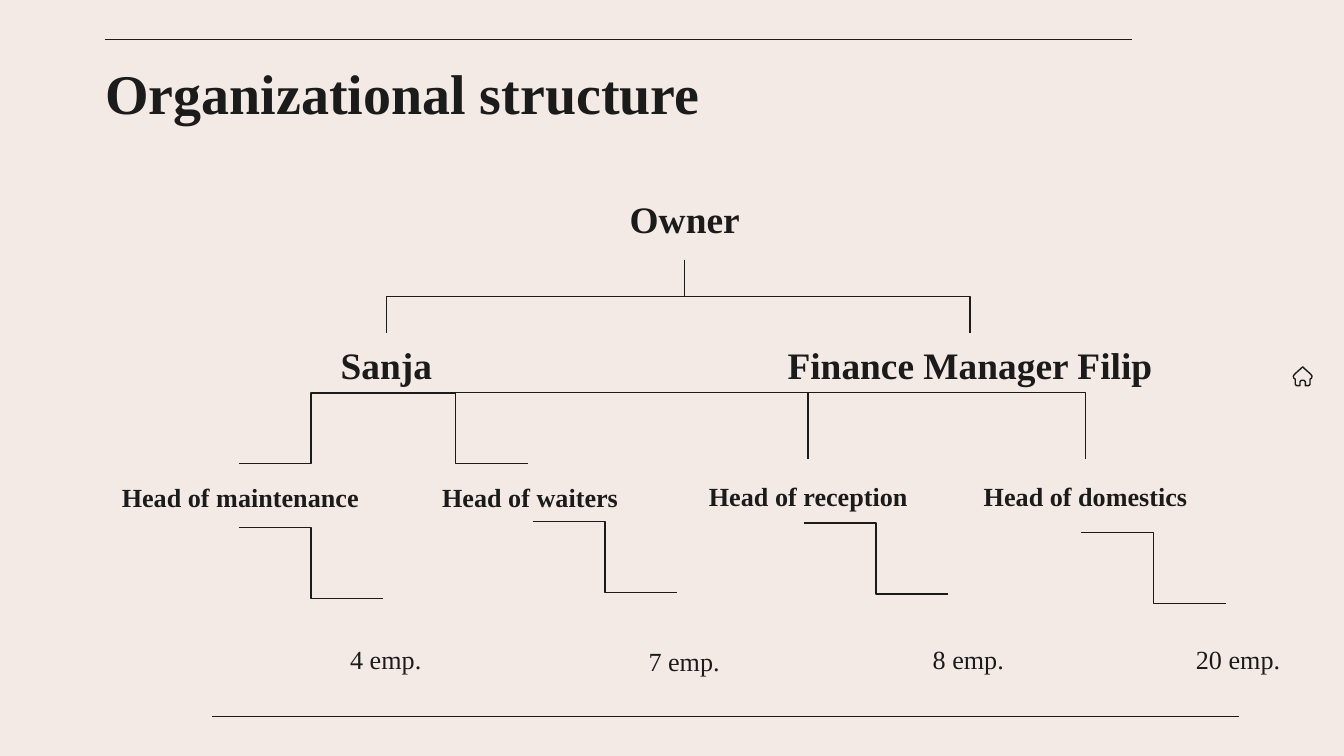
import pptx
import pptx.util
import pptx.dml.color
import pptx.enum.shapes
import pptx.enum.text
import pptx.oxml.ns

# The slide is a grid of 100 columns by 56.25 rows
COLS, ROWS = 100, 56.25
CELL = 91440
FONT = "Times New Roman"
HUES = {"paper": "F4EAE5", "ink": "1B1B1B"}
KINDS = pptx.enum.shapes.MSO_CONNECTOR
TAG = pptx.oxml.ns.qn


def grid(*sizes):
    return [pptx.util.Emu(round(size * CELL)) for size in sizes]


def hue(name):
    return pptx.dml.color.RGBColor.from_string(HUES[name])


def ink(line):
    line.color.rgb = hue("ink")
    line.width = pptx.util.Pt(0.75)


def label(slide, text, box, size, bold=True, title=False):
    frame = slide.shapes.add_textbox(*grid(*box)).text_frame
    frame.word_wrap = True
    edge = grid(0 if title else 1)[0]
    frame.margin_left = frame.margin_right = edge
    frame.margin_top = frame.margin_bottom = edge
    anchor = pptx.enum.text.MSO_ANCHOR
    align = pptx.enum.text.PP_ALIGN
    frame.vertical_anchor = anchor.TOP if title else anchor.MIDDLE
    frame.text = text
    para = frame.paragraphs[0]
    para.alignment = align.LEFT if title else align.CENTER
    font = para.runs[0].font
    font.name, font.size, font.bold = FONT, pptx.util.Pt(size), bold
    font.color.rgb = hue("ink")


def link(slide, start, end, kind=KINDS.ELBOW):
    line = slide.shapes.add_connector(kind, *grid(*start, *end))
    ink(line.line)
    props = line._element.spPr
    props.append(props.makeelement(TAG("a:effectLst"), {}))
    return line


def turn(slide, start, end, angle, flip=None, shape="bentConnector3"):
    """Elbow that leaves its start vertically: a rotated connector."""
    (x1, y1), (x2, y2) = start, end
    midx, midy = (x1 + x2) / 2, (y1 + y2) / 2
    wide, high = abs(y2 - y1) / 2, abs(x2 - x1) / 2
    line = link(slide, (midx - wide, midy - high), (midx + wide, midy + high))
    props = line._element.spPr
    frame = props.find(TAG("a:xfrm"))
    frame.set("rot", str(angle * 60000))
    if flip:
        frame.set(flip, "1")
    props.find(TAG("a:prstGeom")).set("prst", shape)


def house(slide, left, top):
    # Outline in hundredths of a grid cell
    half = [(0, 0), (10, 10), (60, 55), (70, 70), (65, 85), (55, 92),
            (55, 130), (45, 140), (20, 140), (20, 110), (10, 100)]
    ring = half + [(-x, y) for x, y in reversed(half[1:])]
    spots = [(left * 100 + x, top * 100 + y) for x, y in ring]
    pen = slide.shapes.build_freeform(*spots[0], scale=CELL / 100)
    pen.add_line_segments(spots[1:], close=True)
    icon = pen.convert_to_shape()
    icon.shadow.inherit = False
    icon.fill.background()
    ink(icon.line)


def main():
    deck = pptx.Presentation()
    deck.slide_width, deck.slide_height = grid(COLS, ROWS)
    slide = deck.slides.add_slide(deck.slide_layouts[6])
    slide.background.fill.solid()
    slide.background.fill.fore_color.rgb = hue("paper")

    # Frame rules and title
    for left, top in [(7.8, 2.93), (15.8, 53.3)]:
        link(slide, (left, top), (left + 76.4, top), KINDS.STRAIGHT)
    label(slide, "Organizational structure", (7.85, 4.34, 84.3, 5), 30, title=True)

    # Owner and managers
    label(slide, "Owner", (40.85, 13.2, 20.2, 6.1), 20)
    label(slide, "Sanja", (17.4, 24.8, 22.7, 4.6), 20)
    label(slide, "Finance Manager Filip", (56.43, 24.8, 31.5, 4.6), 20)
    owner = (50.95, 19.33)
    turn(slide, owner, (28.77, 24.78), 90)
    turn(slide, owner, (72.18, 24.78), 270, "flipH")

    # Links from Sanja to the four heads
    step, drop = 10.75, 5.28
    sanja = (28.53, 29.23)
    for side in (-step, step):
        link(slide, sanja, (sanja[0] + side, sanja[1] + drop))
    for x in (60.13, 80.77):
        turn(slide, (x, 34.14), (33.8, 29.23), 270, "flipV", "bentConnector2")

    # Heads: name, left, top; staff: text, left, top, width; link start
    teams = [
        ("Head of maintenance", 7.74, 34.2, "4 emp.", 18.56, 46.3, 20.3, (17.75, 39.25)),
        ("Head of waiters", 29.3, 34.2, "7 emp.", 40.76, 46.43, 20.3, (39.64, 38.8)),
        ("Head of reception", 50, 34.14, "8 emp.", 61.9, 46.3, 20.3, (59.8, 38.91)),
        ("Head of domestics", 70.63, 34.14, "20 emp.", 83.02, 46.3, 18.2, (80.46, 39.62)),
    ]
    for head, x, y, staff, left, top, width, start in teams:
        label(slide, head, (x, y, 20.3, 5.5), 14)
        label(slide, staff, (left, top, width, 5.5), 14, bold=False)
        link(slide, start, (start[0] + step, start[1] + drop))

    # Home icon
    house(slide, 96.93, 27.3)
    deck.save("out.pptx")


if __name__ == "__main__":
    main()
